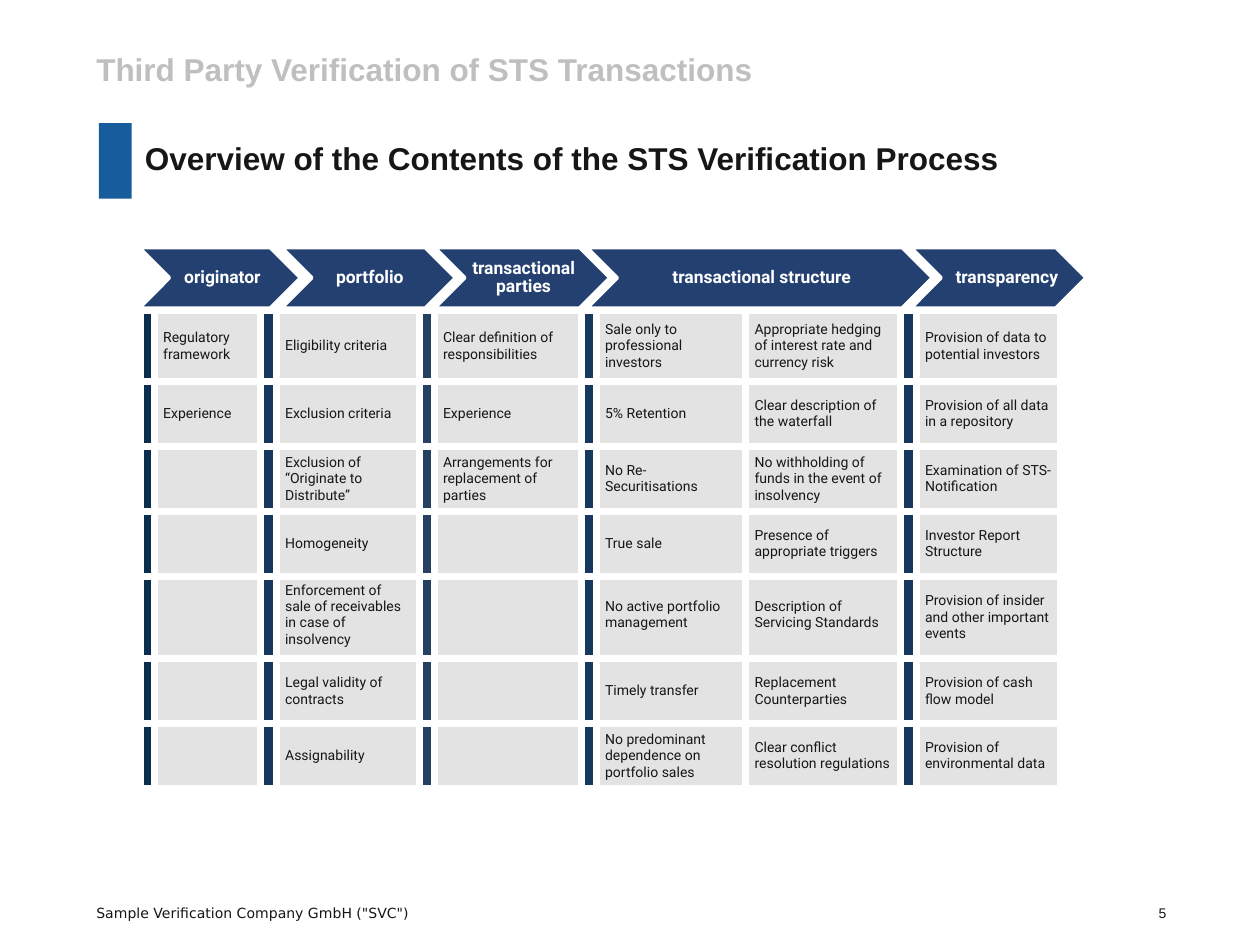
from lxml import etree
from pptx import Presentation, util as u
from pptx.dml.color import RGBColor
from pptx.enum import shapes as sh, text as tx
from pptx.oxml.ns import qn

THEME = {
    "ink": "171616", "mute": "BFBFBF", "white": "FFFFFF", "mark": "175C9B",
    "step": "234071", "cell": "E3E3E4",
    "bars": {1: "0C2E4E", 3: "17375E", 5: "254061", 7: "17375E", 10: "17375E"},
    "head": 18, "label": 10, "small": 8,
    "sans": "Arial", "body": "Roboto", "foot": "DejaVu Sans",
}

deck = Presentation()
deck.slide_width, deck.slide_height = u.Inches(10), u.Inches(7.5)
slide = deck.slides.add_slide(deck.slide_layouts[6])


def area(left, top, wide, high):
    """Turn percentages of the slide into lengths."""
    across, down = deck.slide_width / 100, deck.slide_height / 100
    return [int(n) for n in (left * across, top * down, wide * across, high * down)]


def write(frame, words, size, font, color="ink", bold=False, lead=None,
          align=tx.PP_ALIGN.LEFT):
    for i, line in enumerate(words.split("\n")):
        para = frame.paragraphs[0] if i == 0 else frame.add_paragraph()
        para.alignment = align
        if lead:
            para.line_spacing = lead
        run = para.add_run()
        run.text = line
        run.font.size, run.font.name, run.font.bold = u.Pt(THEME[size]), THEME[font], bold
        run.font.color.rgb = RGBColor.from_string(THEME[color])


# Blue marker beside the title
mark = slide.shapes.add_shape(sh.MSO_SHAPE.RECTANGLE, *area(7.85, 13.03, 2.6, 8))
mark.shadow.inherit = False
mark.fill.solid()
mark.fill.fore_color.rgb = RGBColor.from_string(THEME["mark"])
mark.line.fill.background()

# Section name sits in an unfilled box
band = slide.shapes.add_shape(sh.MSO_SHAPE.ROUNDED_RECTANGLE, *area(7.65, 4.53, 70, 5.47))
band.adjustments[0] = 0
band.shadow.inherit = False
band.fill.background()
band.line.fill.background()

# Section, title, footer and page number
notes = [
    (band, "Third Party Verification of STS Transactions",
     dict(size="head", font="sans", color="mute", bold=True, lead=1.2)),
    (slide.shapes.add_textbox(*area(11.5, 14.7, 80.7, 10.53)),
     "Overview of the Contents of the STS Verification Process",
     dict(size="head", font="sans", bold=True)),
    (slide.shapes.add_textbox(*area(7.65, 95.73, 76.7, 1.73)),
     'Sample Verification Company GmbH ("SVC")', dict(size="small", font="foot")),
    (slide.shapes.add_textbox(*area(91.95, 95.73, 5.7, 1.73)),
     "5", dict(size="small", font="sans")),
]
for box, words, look in notes:
    frame = box.text_frame
    frame.word_wrap = True
    frame.vertical_anchor = tx.MSO_ANCHOR.TOP
    frame.margin_left = frame.margin_right = frame.margin_top = frame.margin_bottom = 0
    write(frame, words, **look)

# Criteria table: narrow colour bars between the text columns
wide = [3.05, 1.11, 8.45, 1.23, 11.35, 1.19, 11.67, 1.19, 11.87, 12.26, 1.27, 11.45]
high = [6.88] * 4 + [8] + [6.88] * 2
slots = [2, 4, 6, 8, 9, 11]
topics = [
    ["Regulatory\nframework", "Eligibility criteria", "Clear definition of responsibilities",
     "Sale only to professional investors",
     "Appropriate hedging of interest rate and currency risk",
     "Provision of data to potential investors"],
    ["Experience", "Exclusion criteria", "Experience", "5% Retention",
     "Clear description of the waterfall", "Provision of all data in a repository"],
    ["", "Exclusion of “Originate to Distribute”", "Arrangements for replacement of parties",
     "No Re-Securitisations", "No withholding of funds in the event of insolvency",
     "Examination of STS-Notification"],
    ["", "Homogeneity", "", "True sale", "Presence of appropriate triggers",
     "Investor Report Structure"],
    ["", "Enforcement of sale of receivables in case of insolvency", "",
     "No active portfolio management", "Description of Servicing Standards",
     "Provision of insider and other important events"],
    ["", "Legal validity of contracts", "", "Timely transfer", "Replacement Counterparties",
     "Provision of cash flow model"],
    ["", "Assignability", "", "No predominant dependence on portfolio sales",
     "Clear conflict resolution regulations", "Provision of environmental data"],
]
# Top and bottom insets by row, then right insets, for the text columns in order
pads = {
    0: [(0.04, 0.04)] * 4 + [(0.08, 0.08)] * 2,
    1: [(0, 0)] * 4 + [(0.04, 0.04), (0.08, 0.08)],
    4: [(0.04, 0.08)] * 5 + [(0.08, 0.08)],
}
plain = [(0, 0)] * 6
ends = [0, 0.1, 0.07, 0.07, 0.07, 0.07]

grid = slide.shapes.add_table(len(high), len(wide),
                              *area(8.1, 32.9, sum(wide), sum(high))).table
grid.first_row = grid.horz_banding = False
for col, share in zip(grid.columns, wide):
    col.width = area(0, 0, share, 0)[2]
for row, share in zip(grid.rows, high):
    row.height = area(0, 0, 0, share)[3]

for r, row in enumerate(topics):
    for c in range(len(wide)):
        cell = grid.cell(r, c)
        cell.margin_left = cell.margin_right = cell.margin_top = cell.margin_bottom = 0
        if c == 0:
            cell.fill.background()
        else:
            cell.fill.solid()
            tint = THEME["bars"].get(c, THEME["cell"])
            cell.fill.fore_color.rgb = RGBColor.from_string(tint)
        # White borders make the gaps
        for i, side in enumerate(("lnL", "lnR", "lnT", "lnB")):
            thick = 0.5 if c == 0 and side == "lnL" else 4.5
            edge = etree.Element(qn("a:" + side), w=str(u.Pt(thick)))
            paint = etree.SubElement(edge, qn("a:solidFill"))
            etree.SubElement(paint, qn("a:srgbClr"), val=THEME["white"])
            cell._tc.get_or_add_tcPr().insert(i, edge)
    for k, (c, words) in enumerate(zip(slots, row)):
        if words:
            cell = grid.cell(r, c)
            top, base = pads.get(r, plain)[k]
            cell.vertical_anchor = tx.MSO_ANCHOR.MIDDLE
            cell.margin_left, cell.margin_right = u.Inches(0.07), u.Inches(ends[k])
            cell.margin_top, cell.margin_bottom = u.Inches(top), u.Inches(base)
            write(cell.text_frame, words, "small", "body")

# Process chevrons: left and width of the arrow, then of its label
steps = [
    ("originator", 11.05, 12.8, 12.8, 9.4),
    ("portfolio", 22.35, 13.8, 24.15, 10.1),
    ("transactional structure", 46.6, 27.4, 50.3, 20),
    ("transactional\nparties", 34.5, 13.9, 36.3, 10.2),
    ("transparency", 72.3, 13.9, 74.2, 11.1),
]
for words, left, span, start, room in steps:
    group = slide.shapes.add_group_shape()
    arrow = group.shapes.add_shape(sh.MSO_SHAPE.CHEVRON, *area(left, 26.2, span, 6.4))
    arrow.shadow.inherit = False
    arrow.fill.solid()
    arrow.fill.fore_color.rgb = RGBColor.from_string(THEME["step"])
    arrow.line.color.rgb = RGBColor.from_string(THEME["white"])
    arrow.line.width = u.Pt(2)
    frame = group.shapes.add_textbox(*area(start, 26.2, room, 6.4)).text_frame
    frame.word_wrap = True
    frame.vertical_anchor = tx.MSO_ANCHOR.MIDDLE
    frame.margin_left = u.Inches(0.04)
    frame.margin_right = frame.margin_top = frame.margin_bottom = u.Inches(0.01)
    write(frame, words, "label", "body", color="white", bold=True, lead=0.9,
          align=tx.PP_ALIGN.CENTER)

deck.save("out.pptx")
